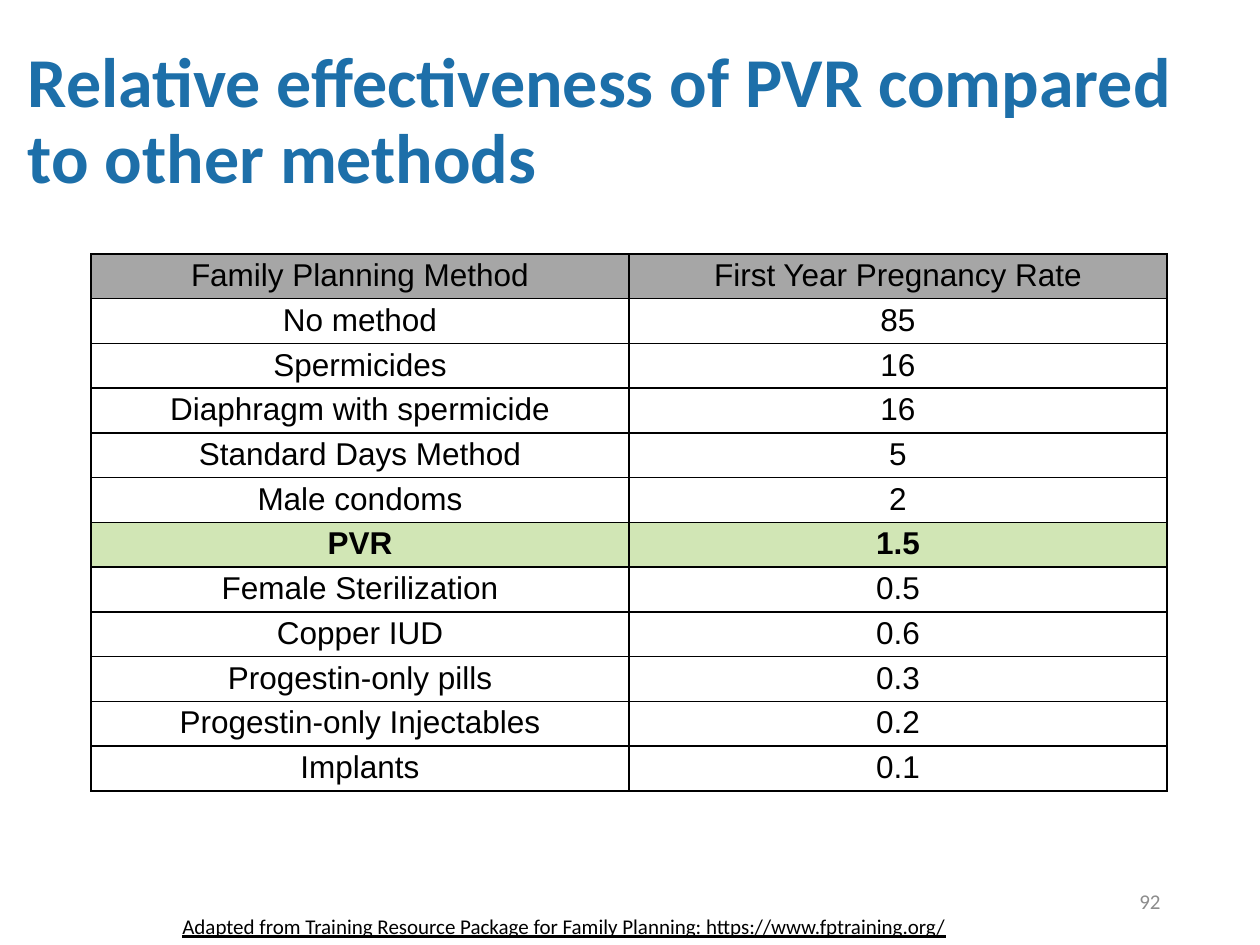
from lxml.etree import SubElement
from pptx import Presentation
from pptx.dml.color import RGBColor
from pptx.enum.text import MSO_ANCHOR, PP_ALIGN
from pptx.oxml.ns import qn
from pptx.util import Emu, Pt

PX = 914400 // 126
COLORS = {
    "title": "1D6FA9",
    "text": "000000",
    "number": "8C8C8C",
    "header": "A6A6A6",
    "highlight": "D1E6B5",
    "border": "000000",
}
ROWS = [
    ("Family Planning Method", "First Year Pregnancy Rate"),
    ("No method", "85"),
    ("Spermicides", "16"),
    ("Diaphragm with spermicide", "16"),
    ("Standard Days Method", "5"),
    ("Male condoms", "2"),
    ("PVR", "1.5"),
    ("Female Sterilization", "0.5"),
    ("Copper IUD", "0.6"),
    ("Progestin-only pills", "0.3"),
    ("Progestin-only Injectables", "0.2"),
    ("Implants", "0.1"),
]
ROW_FILLS = {"Family Planning Method": "header", "PVR": "highlight"}


def write_text(frame, text, size=12, font="Calibri", color="text", bold=False,
               underline=False, align=PP_ALIGN.LEFT, spacing=1.0):
    frame.word_wrap = True
    paragraph = frame.paragraphs[0]
    paragraph.alignment = align
    paragraph.line_spacing = spacing
    run = paragraph.add_run()
    run.text = text
    run.font.size = Pt(size)
    run.font.name = font
    run.font.bold = bold
    run.font.underline = underline
    run.font.color.rgb = RGBColor.from_string(COLORS[color])


def add_text_box(left, top, width, height):
    box = slide.shapes.add_textbox(left * PX, top * PX, width * PX, height * PX)
    return box.text_frame


presentation = Presentation()
presentation.slide_width = Emu(1260 * PX)
presentation.slide_height = Emu(945 * PX)
slide = presentation.slides.add_slide(presentation.slide_layouts[6])

table_height = 537 * PX
table = slide.shapes.add_table(
    len(ROWS), 2, 91 * PX, 254 * PX, 1076 * PX, table_height).table
for row, values in zip(table.rows, ROWS):
    row.height = Emu(table_height // len(ROWS))
    fill = ROW_FILLS.get(values[0])
    for cell, value in zip(row.cells, values):
        cell.margin_left = cell.margin_right = Emu(10 * PX)
        cell.margin_top = cell.margin_bottom = Emu(4 * PX)
        write_text(cell.text_frame, value, size=18, font="Arial",
                   bold=fill == "highlight", align=PP_ALIGN.CENTER)
        properties = cell._tc.get_or_add_tcPr()
        for side in ("a:lnL", "a:lnR", "a:lnT", "a:lnB"):
            line = SubElement(properties, qn(side), w=str(Pt(1)))
            solid = SubElement(line, qn("a:solidFill"))
            SubElement(solid, qn("a:srgbClr"), val=COLORS["border"])
        if fill:
            cell.fill.solid()
            cell.fill.fore_color.rgb = RGBColor.from_string(COLORS[fill])
        else:
            cell.fill.background()

title = add_text_box(19, 42, 1194, 151)
title.margin_left = title.margin_right = Emu(9 * PX)
title.margin_top = title.margin_bottom = Emu(5 * PX)
write_text(title, "Relative effectiveness of PVR compared to other methods",
           size=40, color="title", bold=True, spacing=0.9)

number = add_text_box(890, 876, 283, 50)
number.vertical_anchor = MSO_ANCHOR.MIDDLE
write_text(number, "92", color="number", align=PP_ALIGN.RIGHT)

credit = add_text_box(170, 907, 874, 34)
write_text(credit, "Adapted from Training Resource Package for Family Planning: "
           "https://www.fptraining.org/", underline=True)

presentation.save("out.pptx")
